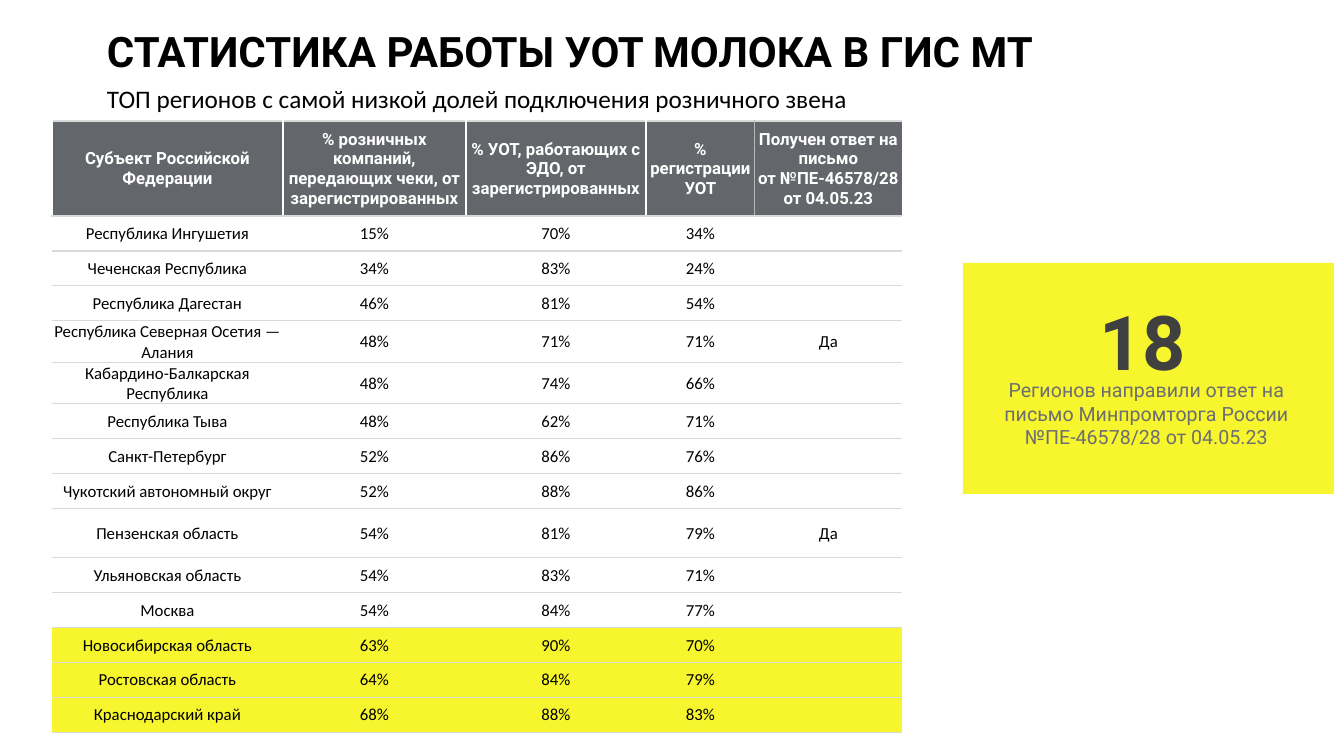
from copy import deepcopy

from lxml import etree
from pptx import Presentation
from pptx.dml.color import RGBColor
from pptx.enum.shapes import MSO_SHAPE
from pptx.enum.text import MSO_ANCHOR, MSO_AUTO_SIZE, PP_ALIGN
from pptx.oxml.ns import qn
from pptx.util import Pt

PX = 914400 / 100.8
LEFT, CENTER = PP_ALIGN.LEFT, PP_ALIGN.CENTER
MIDDLE = MSO_ANCHOR.MIDDLE
FIT_SHAPE = MSO_AUTO_SIZE.SHAPE_TO_FIT_TEXT
RECTANGLE = MSO_SHAPE.RECTANGLE

YELLOW, WHITE, BLACK = "F6F52E", "FFFFFF", "000000"
HEADER_GRAY, RULE_GRAY, SOFT_GRAY = "63666A", "D9D9D9", "B6B8B9"
NUMBER_GRAY, CAPTION_GRAY = "404040", "6D6E71"

COLUMN_WIDTHS = [231, 183, 180, 109, 147]
HEADER_HEIGHT, ROW_HEIGHT, TALL_ROW_HEIGHT = 95, 35, 49
TALL_REGION = "Пензенская область"
HEADERS = [
    "Субъект Российской Федерации",
    "% розничных компаний, передающих чеки, от зарегистрированных",
    "% УОТ, работающих с ЭДО, от зарегистрированных",
    "% регистрации УОТ",
    "Получен ответ на письмо\nот №ПЕ-46578/28 от 04.05.23",
]
REGIONS = [
    ("Республика Ингушетия", 15, 70, 34, ""),
    ("Чеченская Республика", 34, 83, 24, ""),
    ("Республика Дагестан", 46, 81, 54, ""),
    ("Республика Северная Осетия — Алания", 48, 71, 71, "Да"),
    ("Кабардино-Балкарская Республика", 48, 74, 66, ""),
    ("Республика Тыва", 48, 62, 71, ""),
    ("Санкт-Петербург", 52, 86, 76, ""),
    ("Чукотский автономный округ", 52, 88, 86, ""),
    (TALL_REGION, 54, 81, 79, "Да"),
    ("Ульяновская область", 54, 83, 71, ""),
    ("Москва", 54, 84, 77, ""),
    ("Новосибирская область", 63, 90, 70, ""),
    ("Ростовская область", 64, 84, 79, ""),
    ("Краснодарский край", 68, 88, 83, ""),
]
HIGHLIGHTED_COUNT = 3


def px(length):
    return round(length * PX)


def rgb(color):
    return RGBColor.from_string(color)


def write_text(frame, text, size=12, font="Calibri", color=BLACK, bold=False,
               align=CENTER, line_spacing=None, space_after=None):
    paragraph = frame.paragraphs[0]
    paragraph.text = text
    paragraph.alignment = align
    paragraph.line_spacing = line_spacing
    if space_after is not None:
        paragraph.space_after = Pt(space_after)
    for run in paragraph.runs:
        run.font.size = Pt(size)
        run.font.name = font
        run.font.bold = bold
        run.font.color.rgb = rgb(color)
    # Line breaks take the run format, so they do not make the line taller.
    for line_break in paragraph._p.findall(qn("a:br")):
        line_break.insert(0, deepcopy(paragraph.runs[0]._r.rPr))


def add_text(slide, box, text, inset=None, **text_format):
    frame = slide.shapes.add_textbox(*map(px, box)).text_frame
    frame.word_wrap = True
    frame.auto_size = FIT_SHAPE
    if inset is not None:
        frame.margin_left = frame.margin_right = px(inset)
        frame.margin_top = frame.margin_bottom = px(inset)
    write_text(frame, text, **text_format)


def set_border(cell, side, color):
    """Draw one side (L, R, T or B) of a cell; no colour means no line."""
    line = etree.SubElement(cell._tc.get_or_add_tcPr(), qn(f"a:ln{side}"), w=str(Pt(1)))
    if color is None:
        etree.SubElement(line, qn("a:noFill"))
    else:
        fill = etree.SubElement(line, qn("a:solidFill"))
        etree.SubElement(fill, qn("a:srgbClr"), val=color)


def format_cell(cell, text, fill, left, right, **text_format):
    for side, color in zip("LRTB", (left, right, RULE_GRAY, RULE_GRAY)):
        set_border(cell, side, color)
    cell.fill.solid()
    cell.fill.fore_color.rgb = rgb(fill)
    cell.vertical_anchor = MIDDLE
    cell.margin_left = cell.margin_right = cell.margin_top = px(1)
    cell.margin_bottom = 0
    write_text(cell.text_frame, text, **text_format)


def add_heading(slide, left, top):
    add_text(slide, (left, top, 1187, 51), "СТАТИСТИКА РАБОТЫ УОТ МОЛОКА В ГИС МТ",
             size=30, font="Roboto", bold=True, align=LEFT, line_spacing=0.8)
    add_text(slide, (left, top + 54, 805, 35),
             "ТОП регионов с самой низкой долей подключения розничного звена",
             size=18, align=LEFT, line_spacing=0.8)


def add_region_table(slide, left, top):
    heights = [HEADER_HEIGHT] + [
        TALL_ROW_HEIGHT if region[0] == TALL_REGION else ROW_HEIGHT for region in REGIONS]
    box = (left, top, sum(COLUMN_WIDTHS), sum(heights))
    table = slide.shapes.add_table(len(heights), len(COLUMN_WIDTHS), *map(px, box)).table
    table.first_row = table.horz_banding = False
    for column, width in zip(table.columns, COLUMN_WIDTHS):
        column.width = px(width)
    for row, height in zip(table.rows, heights):
        row.height = px(height)

    dividers = [WHITE, WHITE, WHITE, WHITE, SOFT_GRAY, None]
    for index, header in enumerate(HEADERS):
        format_cell(table.cell(0, index), header, HEADER_GRAY,
                    dividers[index], dividers[index + 1],
                    font="Roboto", color=WHITE, bold=True)
    first_highlighted = len(REGIONS) - HIGHLIGHTED_COUNT
    for row, (name, *shares, answer) in enumerate(REGIONS):
        fill = YELLOW if row >= first_highlighted else WHITE
        values = [name, *(f"{share}%" for share in shares), answer]
        for column, value in enumerate(values):
            format_cell(table.cell(row + 1, column), value, fill, None, None)


def add_answer_panel(slide, left, top):
    panel = slide.shapes.add_shape(RECTANGLE, *map(px, (left, top, 371, 231)))
    panel.shadow.inherit = False
    panel.fill.solid()
    panel.fill.fore_color.rgb = rgb(YELLOW)
    panel.line.fill.background()
    add_text(slide, (left + 85, top + 44, 190, 86), "18", size=54, font="Roboto",
             color=NUMBER_GRAY, bold=True, line_spacing=0.8)
    add_text(slide, (left + 30, top + 115, 307, 72),
             "Регионов направили ответ на письмо Минпромторга России\n№ПЕ-46578/28 от 04.05.23",
             inset=0, size=14, font="Roboto", color=CAPTION_GRAY, space_after=8)


def main():
    presentation = Presentation()
    presentation.slide_width, presentation.slide_height = px(1344), px(756)
    slide = presentation.slides.add_slide(presentation.slide_layouts[6])
    add_heading(slide, 97, 30)
    add_region_table(slide, 52, 121)
    add_answer_panel(slide, 963, 263)
    presentation.save("out.pptx")


if __name__ == "__main__":
    main()
